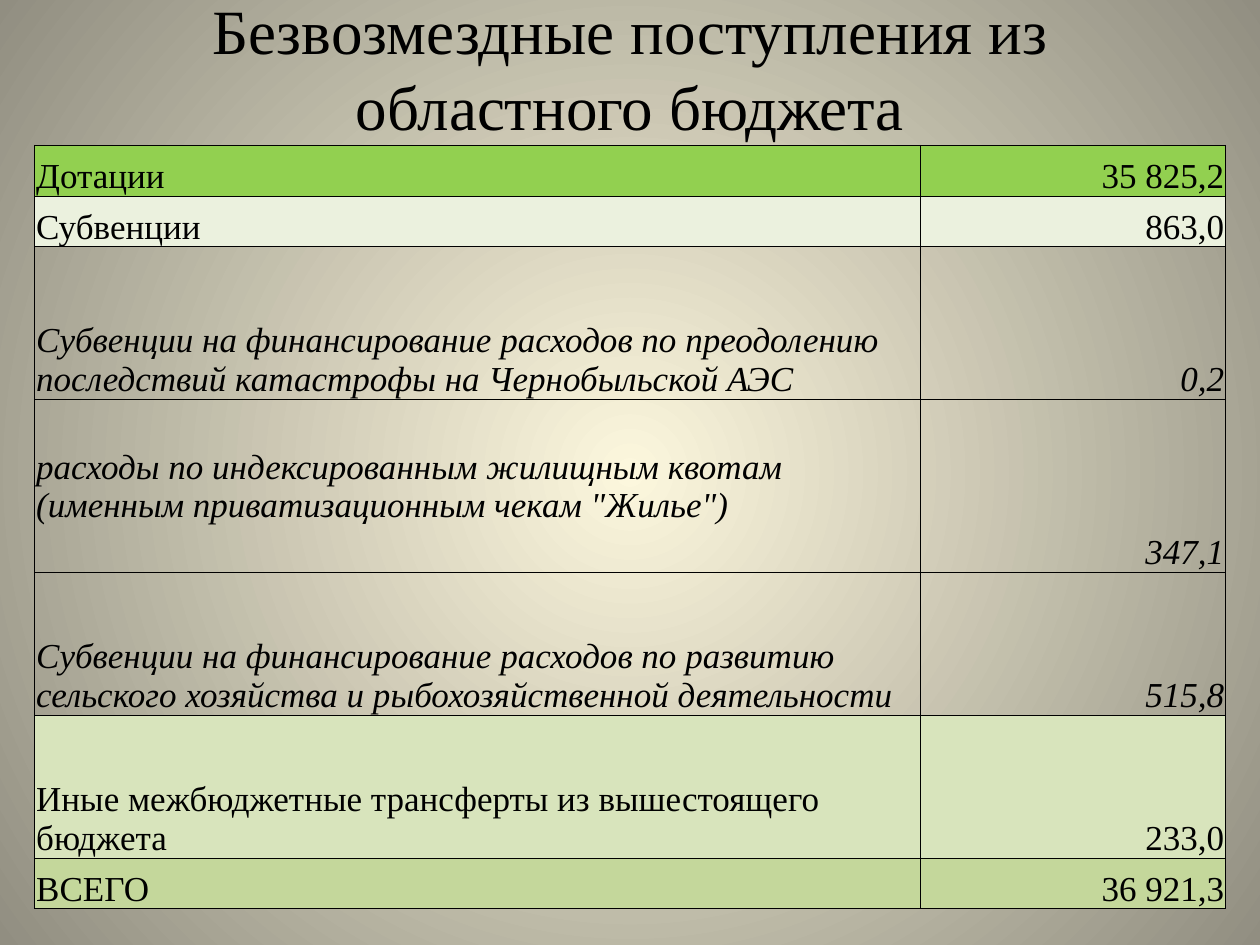
from lxml.etree import SubElement
from pptx import Presentation
from pptx.dml.color import RGBColor
from pptx.enum.text import MSO_ANCHOR, PP_ALIGN
from pptx.oxml import parse_xml
from pptx.oxml.ns import nsdecls, qn
from pptx.util import Cm, Pt

FONT = "Times New Roman"
BLACK = "000000"
TITLE = "Безвозмездные поступления из областного бюджета"
COL_WIDTHS = (17.86, 6.15)
ROWS = [
    ("Дотации", "35 825,2", 1.02, "92D050"),
    ("Субвенции", "863,0", 1.02, "EBF1DE"),
    ("Субвенции на финансирование расходов по преодолению последствий "
     "катастрофы на Чернобыльской АЭС", "0,2", 3.08, None),
    ("расходы по индексированным жилищным квотам (именным "
     "приватизационным чекам \"Жилье\")", "347,1", 3.49, None),
    ("Субвенции на финансирование расходов по развитию сельского хозяйства "
     "и рыбохозяйственной деятельности", "515,8", 2.88, None),
    ("Иные межбюджетные трансферты из вышестоящего бюджета", "233,0", 2.88, "D8E4BC"),
    ("ВСЕГО", "36 921,3", 1.02, "C4D79B"),
]
CENTRED_ROW = 3


def color(value):
    """Return the colour for a hex string."""
    return RGBColor.from_string(value)


def set_font(p, size, italic=False):
    """Set the font of a whole paragraph."""
    p.font.name = FONT
    p.font.size = Pt(size)
    p.font.italic = italic
    p.font.color.rgb = color(BLACK)


def add_background(s, inner, outer):
    """Fill the slide with a circular gradient."""
    fill = s.background.fill
    fill.gradient()
    for stop, value in zip(fill.gradient_stops, (inner, outer)):
        stop.color.rgb = color(value)
    grad = s.background._cSld.find(".//" + qn("a:gradFill"))
    grad.replace(grad.find(qn("a:lin")), parse_xml(
        f'<a:path {nsdecls("a")} path="circle">'
        '<a:fillToRect l="50000" t="50000" r="50000" b="50000"/></a:path>'))


def add_title(s, left, top, width, height):
    """Place the title, raised to clear the table."""
    tf = s.shapes.add_textbox(Cm(left), Cm(top), Cm(width), Cm(height)).text_frame
    tf.word_wrap = True
    tf.vertical_anchor = MSO_ANCHOR.MIDDLE
    tf.margin_bottom = Cm(2.1)
    p = tf.paragraphs[0]
    p.text = TITLE
    p.alignment = PP_ALIGN.CENTER
    set_font(p, 36)


def set_borders(cell):
    """Draw a thin line on each side of a cell."""
    tc_pr = cell._tc.get_or_add_tcPr()
    for i, side in enumerate(("lnL", "lnR", "lnT", "lnB")):
        tc_pr.insert(i, parse_xml(f'<a:{side} {nsdecls("a")} w="{Pt(0.5)}"/>'))
        solid = SubElement(tc_pr[i], qn("a:solidFill"))
        SubElement(solid, qn("a:srgbClr"), val=BLACK)


def fill_cell(cell, text, align, anchor, fill, italic):
    """Write and style one cell."""
    cell.margin_left = cell.margin_right = cell.margin_top = Cm(0.03)
    cell.margin_bottom = 0
    cell.vertical_anchor = anchor
    if fill:
        cell.fill.solid()
        cell.fill.fore_color.rgb = color(fill)
    else:
        cell.fill.background()
    set_borders(cell)
    p = cell.text_frame.paragraphs[0]
    p.text = text
    p.alignment = align
    set_font(p, 20, italic)


def add_revenue_table(s, left, top):
    """Place the table of transfers."""
    height = sum(row[2] for row in ROWS)
    table = s.shapes.add_table(len(ROWS), 2, Cm(left), Cm(top),
                               Cm(sum(COL_WIDTHS)), Cm(height)).table
    table.first_row = table.horz_banding = False
    for col, width in zip(table.columns, COL_WIDTHS):
        col.width = Cm(width)
    for i, (name, amount, row_height, fill) in enumerate(ROWS):
        table.rows[i].height = Cm(row_height)
        anchor = MSO_ANCHOR.MIDDLE if i == CENTRED_ROW else MSO_ANCHOR.BOTTOM
        italic = fill is None
        fill_cell(table.cell(i, 0), name, PP_ALIGN.LEFT, anchor, fill, italic)
        fill_cell(table.cell(i, 1), amount, PP_ALIGN.RIGHT, MSO_ANCHOR.BOTTOM, fill, italic)


def main():
    """Build and save the slide."""
    prs = Presentation()
    prs.slide_width, prs.slide_height = Cm(25.4), Cm(19.05)
    s = prs.slides.add_slide(prs.slide_layouts[6])
    add_background(s, "FCF7DD", "918E81")
    add_title(s, 1.27, 0.76, 22.86, 3.18)
    add_revenue_table(s, 0.7, 2.93)
    prs.save("out.pptx")


if __name__ == "__main__":
    main()
